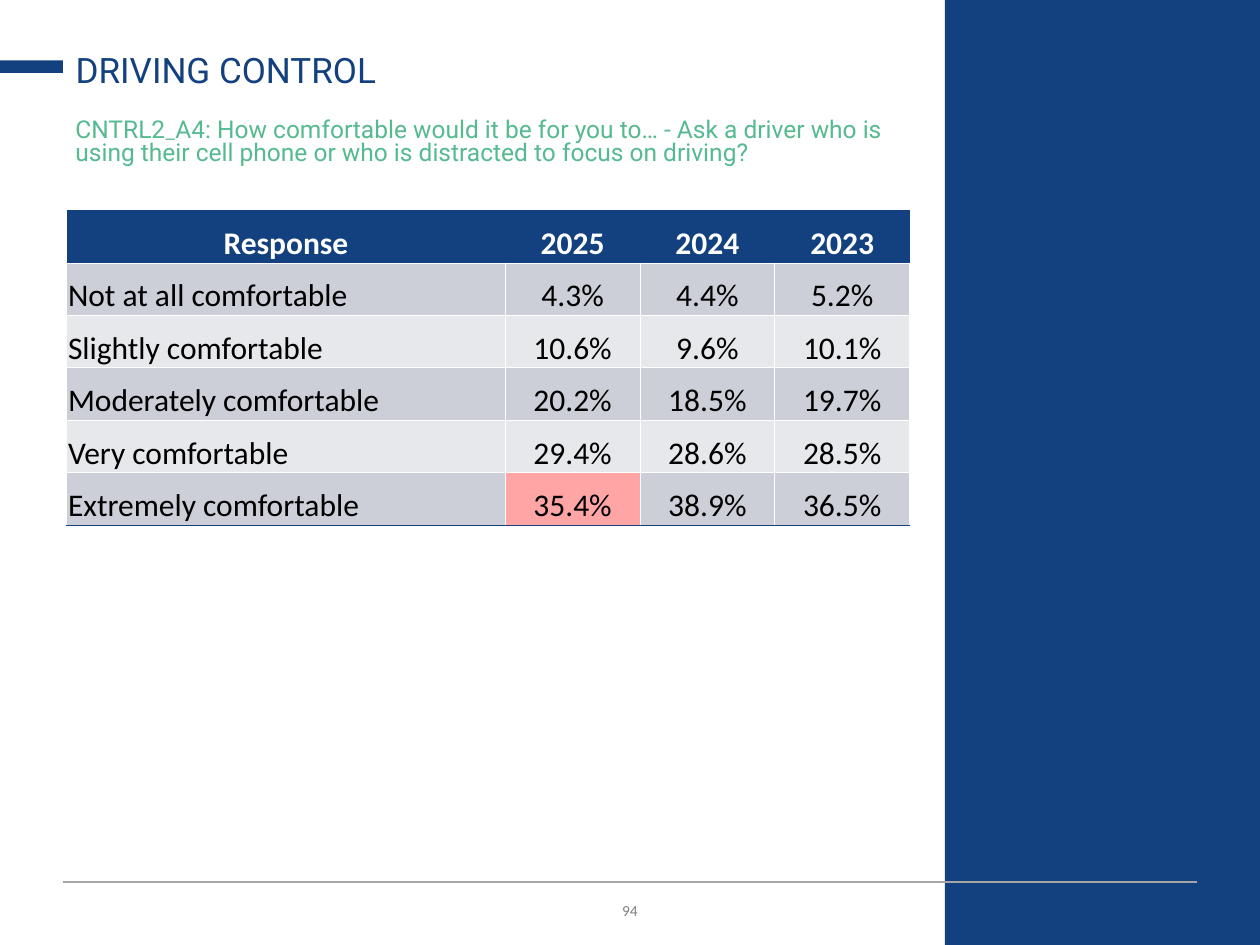
import pptx
import pptx.util
import pptx.dml.color
import pptx.enum.shapes
import pptx.enum.text
import pptx.oxml.ns
from lxml import etree

Inches, Pt = pptx.util.Inches, pptx.util.Pt
RGBColor = pptx.dml.color.RGBColor
ALIGN = pptx.enum.text.PP_ALIGN
ANCHOR = pptx.enum.text.MSO_ANCHOR
qn = pptx.oxml.ns.qn

NAVY = RGBColor(0x13, 0x40, 0x7E)
GREEN = RGBColor(0x55, 0xBA, 0x8F)
WHITE = RGBColor(0xFF, 0xFF, 0xFF)
BLACK = RGBColor(0x00, 0x00, 0x00)
GREY_TEXT = RGBColor(0x80, 0x80, 0x80)
GREY_RULE = RGBColor(0xA6, 0xA6, 0xA6)
BAND_DARK = RGBColor(0xCC, 0xCE, 0xD8)
BAND_LIGHT = RGBColor(0xE7, 0xE8, 0xEC)
HIGHLIGHT = RGBColor(0xFF, 0xA5, 0xA5)


def style_run(run, font, size, color, bold=False):
    run.font.name = font
    run.font.size = Pt(size)
    run.font.color.rgb = color
    run.font.bold = bold


def set_border(cell, side, color):
    """Draw one cell edge at half a point, or clear it when color is None."""
    edge = etree.SubElement(cell._tc.get_or_add_tcPr(), qn(f"a:ln{side}"))
    if color is None:
        edge.set("w", "0")
        etree.SubElement(edge, qn("a:noFill"))
    else:
        edge.set("w", str(Pt(0.5)))
        fill = etree.SubElement(edge, qn("a:solidFill"))
        etree.SubElement(fill, qn("a:srgbClr")).set("val", str(color))


prs = pptx.Presentation()
prs.slide_width, prs.slide_height = Inches(10), Inches(7.5)
W, H = prs.slide_width, prs.slide_height
margin = int(W * 0.05)
text_width = int(W * 0.67)
slide = prs.slides.add_slide(prs.slide_layouts[5])

# Side panel and title accent
for left, top, width, height in [
    (0.75, 0, 0.25, 1),
    (0, 0.064, 0.05, 0.0133),
]:
    block = slide.shapes.add_shape(
        pptx.enum.shapes.MSO_SHAPE.RECTANGLE,
        int(W * left), int(H * top), int(W * width), int(H * height))
    block.shadow.inherit = False
    block.fill.solid()
    block.fill.fore_color.rgb = NAVY
    block.line.fill.background()

# Footer rule and page number
rule = slide.shapes.add_connector(
    pptx.enum.shapes.MSO_CONNECTOR.STRAIGHT,
    margin, Inches(7), W - margin, Inches(7))
rule.line.color.rgb = GREY_RULE
rule.line.width = Pt(0.75)
etree.SubElement(rule._element.spPr, qn("a:effectLst"))

page_number = slide.shapes.add_textbox(margin, Inches(7.06), W - 2 * margin, Inches(0.3))
page_number.text_frame.word_wrap = True
page_number.text_frame.vertical_anchor = ANCHOR.MIDDLE
page_number.text_frame.text = "94"
number_line = page_number.text_frame.paragraphs[0]
number_line.alignment = ALIGN.CENTER
style_run(number_line.runs[0], "Calibri", 11, GREY_TEXT)
number_line.runs[0].font._element.set("cap", "small")

# Title
title = slide.shapes.title
title.left, title.top, title.width, title.height = margin, Inches(0.29), text_width, Inches(0.48)
title.text_frame.text = "DRIVING CONTROL"
title.text_frame.auto_size = pptx.enum.text.MSO_AUTO_SIZE.NONE
title.text_frame.vertical_anchor = ANCHOR.BOTTOM
heading = title.text_frame.paragraphs[0]
heading.alignment = ALIGN.LEFT
heading.line_spacing = 0.9
style_run(heading.runs[0], "Roboto", 20, NAVY)

# Survey question
question = slide.shapes.add_textbox(margin, Inches(0.9), text_width, Inches(0.67))
question.text_frame.word_wrap = True
wording = question.text_frame.paragraphs[0]
wording.line_spacing = 0.8
for part, font in [
    ("CNTRL2", "Roboto"),
    ("_", "League Spartan"),
    ("A4: How comfortable would it be for you to… - Ask a driver who is using "
     "their cell phone or who is distracted to focus on driving?", "Roboto"),
]:
    run = wording.add_run()
    run.text = part
    style_run(run, font, 14, GREEN)

# Response table
responses = [
    ("Response", "2025", "2024", "2023"),
    ("Not at all comfortable", "4.3%", "4.4%", "5.2%"),
    ("Slightly comfortable", "10.6%", "9.6%", "10.1%"),
    ("Moderately comfortable", "20.2%", "18.5%", "19.7%"),
    ("Very comfortable", "29.4%", "28.6%", "28.5%"),
    ("Extremely comfortable", "35.4%", "38.9%", "36.5%"),
]
highlighted = (5, 1)
last_row = len(responses) - 1
table = slide.shapes.add_table(
    len(responses), 4, Inches(0.53), Inches(1.67), Inches(6.69), Inches(2.5)).table
for column, width in zip(table.columns, [3.48, 1.07, 1.07, 1.07]):
    column.width = Inches(width)

for r, record in enumerate(responses):
    header = r == 0
    for c, value in enumerate(record):
        cell = table.cell(r, c)
        cell.margin_left = cell.margin_right = cell.margin_top = Inches(0.01)
        cell.margin_bottom = 0
        cell.vertical_anchor = ANCHOR.BOTTOM
        for side in "LRT":
            set_border(cell, side, None if header else WHITE)
        set_border(cell, "B", NAVY if r == last_row else WHITE)
        cell.fill.solid()
        if header:
            cell.fill.fore_color.rgb = NAVY
        elif (r, c) == highlighted:
            cell.fill.fore_color.rgb = HIGHLIGHT
        else:
            cell.fill.fore_color.rgb = BAND_DARK if r % 2 else BAND_LIGHT
        cell.text_frame.text = value
        entry = cell.text_frame.paragraphs[0]
        entry.alignment = ALIGN.CENTER if header or c else ALIGN.LEFT
        style_run(entry.runs[0], "Calibri", 18, WHITE if header else BLACK, header)

prs.save("out.pptx")
